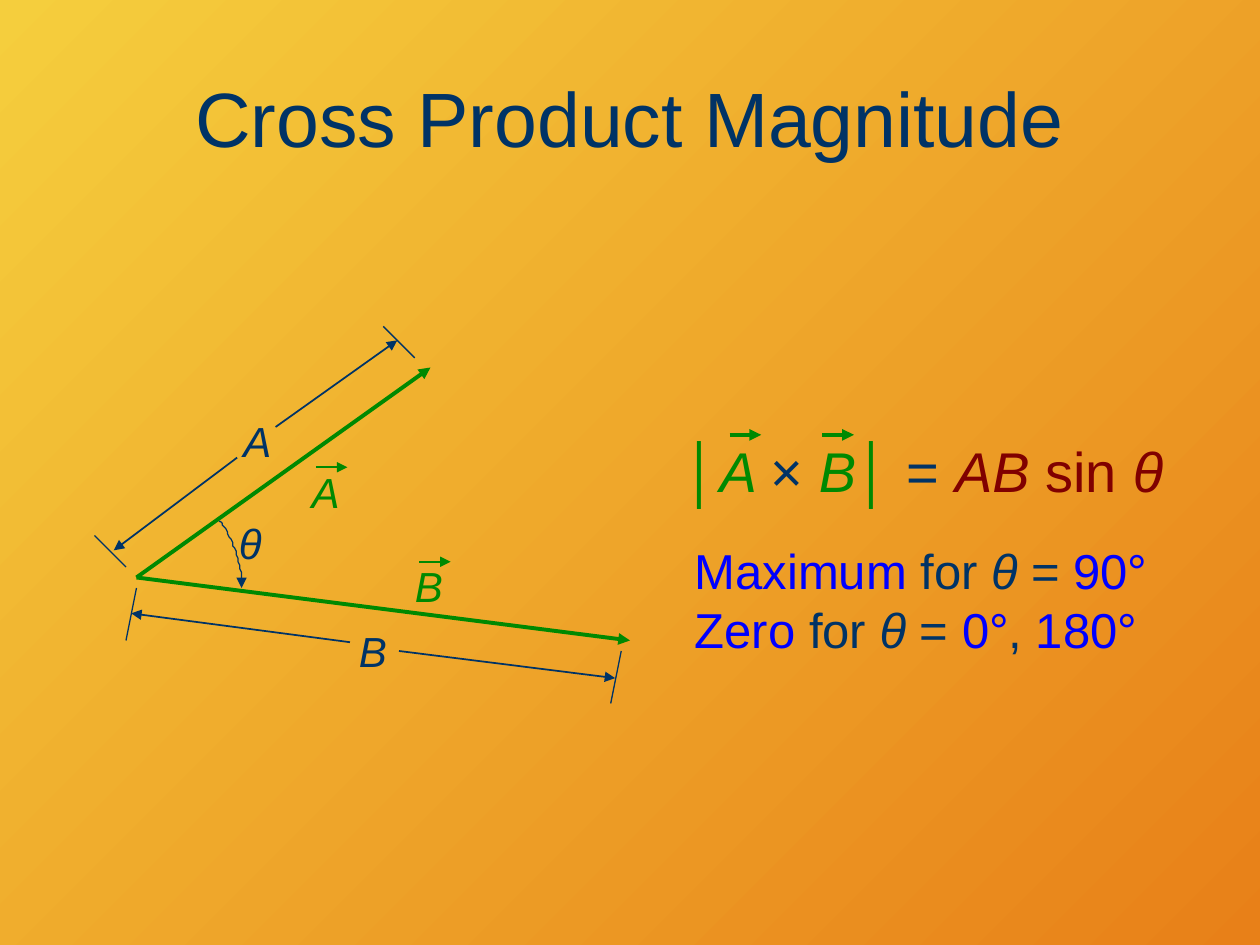
import pptx
import pptx.dml.color
import pptx.enum.shapes
import pptx.enum.text
import pptx.oxml
import pptx.oxml.ns
import pptx.util

Pt = pptx.util.Pt
ALIGN = pptx.enum.text.PP_ALIGN
NAVY, GREEN, MAROON, BLUE = "003366", "008901", "800000", "0000FF"
BACKGROUND = ["F5CE3D", "E88018"]

TITLE = [[("Cross Product Magnitude", NAVY, False)]]
EQUATION = [[
    ("│", GREEN, False), ("A ", GREEN, True), ("× ", NAVY, False),
    ("B", GREEN, True), ("│", GREEN, False), (" = ", NAVY, False),
    ("AB", MAROON, True), (" sin ", MAROON, False), ("θ", MAROON, True),
]]
FOR_THETA = [(" for ", NAVY, False), ("θ", NAVY, True), (" = ", NAVY, False)]
EXTREMES = [
    [("Maximum", BLUE, False), *FOR_THETA, ("90°", BLUE, False)],
    [("Zero", BLUE, False), *FOR_THETA, ("0°", BLUE, False),
     (", ", NAVY, False), ("180°", BLUE, False)],
]

ORIGIN = (78, 330)
VECTOR_TIPS = [(246, 210), (360, 366)]
VECTOR_LABELS = [("A", 171, 263), ("B", 230, 317)]
PLAIN_LABELS = [("A", 132, 234), ("B", 198, 354), ("θ", 128, 292)]
LABEL_SIZE = (30, 36)
OVER_ARROW = (9.5, 4)
OVER_ARROW_LENGTH = 18
EQUATION_ARROWS = [(417, 248.5), (470, 248.5)]
TICKS = [
    ((-6, 30), [(78, 336), (355, 372)]),
    ((-18, -18), [(72, 324), (237, 204.5)]),
]
DIMENSIONS = [
    ((228, 372), (351.5, 387.5)), ((135.5, 261.5), (65, 314.5)),
    ((200, 367), (75, 350.5)), ((157.5, 244), (227, 194.5)),
]
ANGLE_CURVE = [(125, 297.5), (131, 302.5), (138.5, 322), (138.5, 336)]
CURVE_STEPS = 24


def rgb(value):
    return pptx.dml.color.RGBColor.from_string(value)


def add_xml(parent, tag, **attrs):
    el = pptx.oxml.parse_xml(f"<a:{tag} {pptx.oxml.ns.nsdecls('a')}/>")
    for name, value in attrs.items():
        el.set(name, value)
    parent.append(el)


def write(sp, paragraphs, size, align):
    tf = sp.text_frame
    for i, runs in enumerate(paragraphs):
        p = tf.add_paragraph() if i else tf.paragraphs[0]
        p.alignment = align
        for text, color, italic in runs:
            r = p.add_run()
            r.text = text
            fmt = {"name": "Arial", "size": Pt(size), "italic": italic}
            for name, value in fmt.items():
                setattr(r.font, name, value)
            r.font.color.rgb = rgb(color)
    return tf


def place(sp, left, top, width, height):
    box = {"left": left, "top": top, "width": width, "height": height}
    for name, value in box.items():
        setattr(sp, name, Pt(value))


def style_line(sp, color, width, arrow):
    sp.line.color.rgb = rgb(color)
    sp.line.width = Pt(width)
    if arrow:
        add_xml(sp.line._get_or_add_ln(), "tailEnd", type="triangle")


def add_line(s, start, end, color, width, arrow=True):
    sp = s.shapes.add_connector(
        pptx.enum.shapes.MSO_CONNECTOR.STRAIGHT, *map(Pt, (*start, *end)))
    style_line(sp, color, width, arrow)
    add_xml(sp._element.spPr, "effectLst")


def add_over_arrow(s, x, y, width):
    add_line(s, (x, y), (x + OVER_ARROW_LENGTH, y), GREEN, width)


def add_label(s, text, x, y, color):
    sp = s.shapes.add_textbox(*map(Pt, (x, y, *LABEL_SIZE)))
    tf = write(sp, [[(text, color, True)]], 24, ALIGN.CENTER)
    tf.word_wrap = True


def bezier(points, t):
    weights = ((1 - t) ** 3, 3 * t * (1 - t) ** 2, 3 * t * t * (1 - t), t ** 3)
    return tuple(sum(w * pt[axis] for w, pt in zip(weights, points))
                 for axis in (0, 1))


def add_angle_curve(s):
    points = [bezier(ANGLE_CURVE, i / CURVE_STEPS) for i in range(CURVE_STEPS + 1)]
    builder = s.shapes.build_freeform(*points[0], scale=float(Pt(1)))
    builder.add_line_segments(points[1:], close=False)
    sp = builder.convert_to_shape()
    sp.fill.background()
    style_line(sp, NAVY, 0.75, True)
    sp.shadow.inherit = False


def main():
    prs = pptx.Presentation()
    prs.slide_width, prs.slide_height = Pt(720), Pt(540)
    s = prs.slides.add_slide(prs.slide_layouts[1])

    fill = s.background.fill
    fill.gradient()
    fill.gradient_angle = 315
    for stop, color, position in zip(fill.gradient_stops, BACKGROUND, (0, 1)):
        stop.color.rgb = rgb(color)
        stop.position = position

    title, body = s.shapes.title, s.placeholders[1]
    place(title, 36, 21.6, 648, 90)
    tf = write(title, TITLE, 44, ALIGN.CENTER)
    tf.vertical_anchor = pptx.enum.text.MSO_ANCHOR.MIDDLE
    place(body, 384, 246, 306, 54)
    tf = write(body, EQUATION, 32, ALIGN.LEFT)
    pPr = tf.paragraphs[0]._p.get_or_add_pPr()
    pPr.set("marL", "0")
    pPr.set("indent", "0")
    add_xml(pPr, "buNone")

    for tip in VECTOR_TIPS:
        add_line(s, ORIGIN, tip, GREEN, 2.25)
    for text, x, y in VECTOR_LABELS:
        add_label(s, text, x, y, GREEN)
        add_over_arrow(s, x + OVER_ARROW[0], y + OVER_ARROW[1], 1)
    for text, x, y in PLAIN_LABELS:
        add_label(s, text, x, y, NAVY)
    for (dx, dy), starts in TICKS:
        for x, y in starts:
            add_line(s, (x, y), (x + dx, y + dy), NAVY, 0.75, arrow=False)
    for start, end in DIMENSIONS:
        add_line(s, start, end, NAVY, 1)
    add_angle_curve(s)
    for x, y in EQUATION_ARROWS:
        add_over_arrow(s, x, y, 2.25)

    sp = s.shapes.add_textbox(*map(Pt, (390, 305.5, 273.5, 74)))
    tf = write(sp, EXTREMES, 28, ALIGN.LEFT)
    tf.word_wrap = False

    prs.save("out.pptx")


if __name__ == "__main__":
    main()
